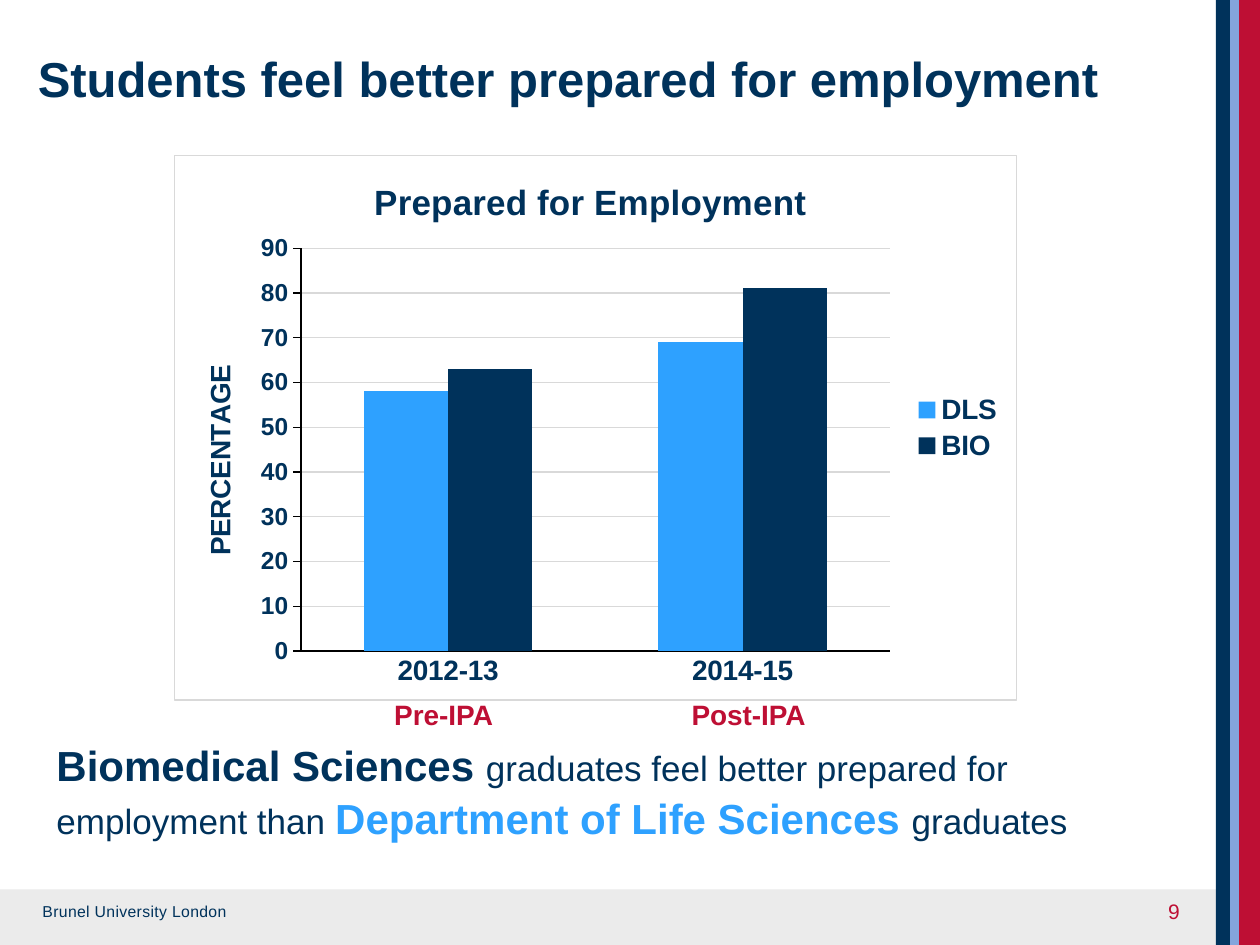
import pptx
import pptx.chart.data
import pptx.dml.color
import pptx.enum.chart
import pptx.enum.shapes
import pptx.enum.text
import pptx.oxml
import pptx.oxml.ns
import pptx.util

Pt = pptx.util.Pt
Align = pptx.enum.text.PP_ALIGN
Anchor = pptx.enum.text.MSO_ANCHOR

COLOURS = {
    "navy": "00325B", "red": "BE0F34", "periwinkle": "84A5DC", "sky": "2EA1FF",
    "footer": "EBEBEB", "grid": "D9D9D9", "white": "FFFFFF", "black": "000000",
}


def colour(name):
    return pptx.dml.color.RGBColor.from_string(COLOURS[name])


class SlideBuilder:
    """Holds the style and the current page."""

    font_name = "Arial"

    def __init__(self, page):
        self.page = page

    def style(self, font, size, name="navy", bold=False):
        font.name = self.font_name
        font.size = Pt(size)
        font.bold = bold
        font.color.rgb = colour(name)

    def band(self, left, top, width, height, fill):
        shape = self.page.shapes.add_shape(
            pptx.enum.shapes.MSO_SHAPE.RECTANGLE, Pt(left), Pt(top), Pt(width), Pt(height))
        shape.shadow.inherit = False
        shape.fill.solid()
        shape.fill.fore_color.rgb = colour(fill)
        shape.line.fill.background()

    def title(self, text, left, top, width, height):
        box = self.page.shapes.title
        box.left, box.top, box.width, box.height = Pt(left), Pt(top), Pt(width), Pt(height)
        frame = box.text_frame
        frame.text = text
        frame.auto_size = pptx.enum.text.MSO_AUTO_SIZE.NONE
        frame.vertical_anchor = Anchor.TOP
        para = frame.paragraphs[0]
        para.alignment = Align.LEFT
        para.line_spacing = 1.1
        self.style(para.font, 28, bold=True)

    def text(self, text, left, top, width, height, size, name="navy", bold=False,
             align=Align.LEFT, anchor=Anchor.TOP):
        box = self.page.shapes.add_textbox(Pt(left), Pt(top), Pt(width), Pt(height))
        frame = box.text_frame
        frame.word_wrap = True
        frame.vertical_anchor = anchor
        para = frame.paragraphs[0]
        para.alignment = align
        if text:
            para.add_run().text = text
        self.style(para.font, size, name, bold)
        return para

    def rich_text(self, spans, left, top, width, height):
        para = self.text("", left, top, width, height, 20)
        para.line_spacing = 1.05
        for words, size, name, bold in spans:
            span = para.add_run()
            span.text = words
            self.style(span.font, size, name, bold)

    def caption(self, owner, text, size):
        frame = owner.text_frame
        frame.text = text
        self.style(frame.paragraphs[0].runs[0].font, size, bold=True)
        return frame

    def axis(self, axis, size, tick):
        axis.major_tick_mark = tick
        axis.minor_tick_mark = pptx.enum.chart.XL_TICK_MARK.NONE
        axis.format.line.color.rgb = colour("black")
        axis.format.line.width = Pt(0.75)
        self.style(axis.tick_labels.font, size, bold=True)

    def column_chart(self, title, axis_title, categories, series, left, top, width, height):
        data = pptx.chart.data.CategoryChartData()
        data.categories = categories
        for name, values, _ in series:
            data.add_series(name, values)
        chart = self.page.shapes.add_chart(
            pptx.enum.chart.XL_CHART_TYPE.COLUMN_CLUSTERED,
            Pt(left), Pt(top), Pt(width), Pt(height), data).chart
        self.style(chart.font, 10, "black")
        self.caption(chart.chart_title, title, 20)
        chart.chart_title.include_in_layout = False

        # Columns
        plot = chart.plots[0]
        plot.gap_width = 150
        plot.overlap = 0
        plot.vary_by_categories = False
        for columns, (_, _, fill) in zip(plot.series, series):
            columns.format.fill.solid()
            columns.format.fill.fore_color.rgb = colour(fill)

        # Axes
        marks = pptx.enum.chart.XL_TICK_MARK
        self.axis(chart.category_axis, 16, marks.NONE)
        value_axis = chart.value_axis
        self.axis(value_axis, 14, marks.OUTSIDE)
        value_axis.minimum_scale, value_axis.maximum_scale = 0, 90
        value_axis.major_unit = 10
        value_axis.major_gridlines.format.line.color.rgb = colour("grid")
        value_axis.major_gridlines.format.line.width = Pt(0.75)
        frame = self.caption(value_axis.axis_title, axis_title, 16)
        frame._txBody.bodyPr.set("rot", "-5400000")
        frame._txBody.bodyPr.set("vert", "horz")

        # Legend
        chart.has_legend = True
        chart.legend.position = pptx.enum.chart.XL_LEGEND_POSITION.RIGHT
        chart.legend.include_in_layout = False
        self.style(chart.legend.font, 16, bold=True)

        self.chart_frame(chart, x=0.15, y=0.17, w=0.7, h=0.74)

    def chart_frame(self, chart, **place):
        """Set the plot area's place, and the chart's background and border."""
        names = pptx.oxml.ns.nsdecls("c", "a")
        parts = "".join(f'<c:{key} val="{value}"/>' for key, value in place.items())
        layout = pptx.oxml.parse_xml(
            f'<c:layout {names}><c:manualLayout><c:layoutTarget val="inner"/>'
            f'<c:xMode val="edge"/><c:yMode val="edge"/>{parts}</c:manualLayout></c:layout>')
        root = chart._chartSpace
        plot_area = root.chart.plotArea
        for old in plot_area.findall(pptx.oxml.ns.qn("c:layout")):
            plot_area.remove(old)
        plot_area.insert(0, layout)
        root.chart.addnext(pptx.oxml.parse_xml(
            f'<c:spPr {names}><a:solidFill><a:srgbClr val="{COLOURS["white"]}"/></a:solidFill>'
            f'<a:ln w="{Pt(0.75)}"><a:solidFill><a:srgbClr val="{COLOURS["grid"]}"/>'
            '</a:solidFill></a:ln></c:spPr>'))


def main():
    deck = pptx.Presentation()
    deck.slide_width, deck.slide_height = Pt(720), Pt(540)
    page = deck.slides.add_slide(deck.slide_layouts[5])
    builder = SlideBuilder(page)

    # Footer band and side stripes
    builder.band(0, 508.3, 720, 31.7, "footer")
    for left, width, fill in ((708, 12, "red"), (702.8, 5.2, "periwinkle"), (694.8, 8, "navy")):
        builder.band(left, 0, width, 540, fill)
    footer = builder.text("Brunel University London", 17.2, 512, 127.5, 18, 9)
    footer.runs[0].font._element.set("spc", "20")
    builder.text("9", 513.4, 506.2, 167.8, 28.8, 12, "red",
                 align=Align.RIGHT, anchor=Anchor.MIDDLE)

    # Title
    builder.title("Students feel better prepared for employment", 14.4, 20.9, 655, 62.6)

    # Chart
    builder.column_chart(
        "Prepared for Employment ", "PERCENTAGE", ["2012-13", "2014-15"],
        [("DLS", (58, 69), "sky"), ("BIO", (63, 81), "navy")],
        99.4, 88.6, 481.7, 311.8)

    # Conclusion
    builder.rich_text([
        ("Biomedical Sciences ", 24, "navy", True),
        ("graduates feel better prepared for employment than ", 20, "navy", False),
        ("Department of Life Sciences ", 24, "sky", True),
        ("graduates", 20, "navy", False),
    ], 25.2, 417.6, 657.4, 65.5)

    # Labels under the year groups
    for label, left in (("Pre-IPA", 218.2), ("Post-IPA", 388.1)):
        builder.text(label, left, 395.3, 90.7, 26.6, 16, "red", bold=True)

    deck.save("out.pptx")


if __name__ == "__main__":
    main()
